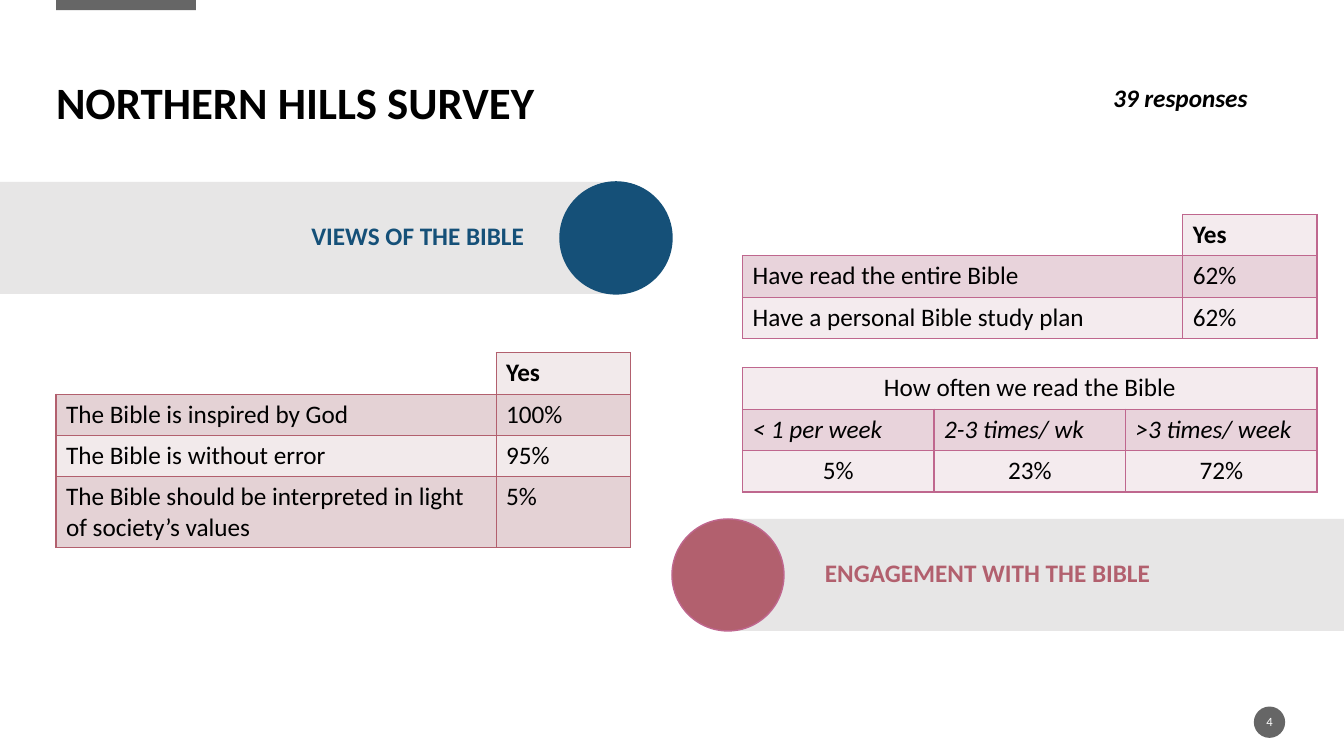
from lxml.etree import SubElement
from pptx import Presentation
from pptx.dml.color import RGBColor
from pptx.enum.shapes import MSO_SHAPE as Preset
from pptx.enum.text import MSO_ANCHOR as Anchor, MSO_AUTO_SIZE as AutoSize, PP_ALIGN as Align
from pptx.oxml.ns import qn
from pptx.util import Inches, Pt

WIDTH, HEIGHT = Inches(13.33), Inches(7.5)
UNIT = WIDTH / 24
ROW = 0.74
ANSWER_COLS = (7.86, 2.4)
FREQUENCY_COLS = (3.42, 3.42, 3.42)
COLORS = {
    "black": "000000", "white": "FFFFFF", "gray": "666666", "band": "E7E6E6",
    "navy": "155078", "rose": "B2606E", "pink": "BF678E",
}
VIEWS_STYLE = {"border": "B2606E", "bands": ("F2EAEB", "E4D2D5")}
ENGAGEMENT_STYLE = {"border": "BF678E", "bands": ("F4EBEE", "E8D3DB")}


def grid(*units):
    """Turn grid units, 24 to the slide's width, into lengths."""
    return [round(unit * UNIT) for unit in units]


def rgb(name):
    """Look up a named colour."""
    return RGBColor.from_string(COLORS[name])


def write(frame, text, size=18, color="black", bold=False, italic=False,
          align=Align.LEFT, spacing=None, before=None):
    """Put one formatted paragraph into a text frame."""
    paragraph = frame.paragraphs[0]
    paragraph.alignment = align
    paragraph.line_spacing = spacing
    paragraph.space_before = before
    run = paragraph.add_run()
    run.text = text
    font = run.font
    font.name, font.size, font.bold, font.italic = "Calibri", Pt(size), bold, italic
    font.color.rgb = rgb(color)


def trim(frame, anchor):
    """Remove the insets of a text frame and anchor its text."""
    frame.margin_left = frame.margin_right = frame.margin_top = frame.margin_bottom = 0
    frame.vertical_anchor = anchor
    frame.auto_size = AutoSize.NONE
    frame.word_wrap = True


def add_block(slide, preset, place, fill, outline=None):
    """Draw a plain filled shape."""
    block = slide.shapes.add_shape(preset, *grid(*place))
    block.shadow.inherit = False
    block.fill.solid()
    block.fill.fore_color.rgb = rgb(fill)
    if outline:
        block.line.color.rgb = rgb(outline)
        block.line.width = Pt(1)
    else:
        block.line.fill.background()


def fill_placeholder(holder, place, text, anchor=Anchor.MIDDLE, **style):
    """Move a placeholder and write its text."""
    holder.left, holder.top, holder.width, holder.height = grid(*place)
    trim(holder.text_frame, anchor)
    write(holder.text_frame, text, bold=True, spacing=0.9, **style)


def set_borders(cell, color, edges):
    """Draw the given edges of a cell and clear the others."""
    properties = cell._tc.get_or_add_tcPr()
    for edge in "LRTB":
        line = SubElement(properties, qn(f"a:ln{edge}"), w=str(Pt(1)))
        if edge in edges:
            paint = SubElement(line, qn("a:solidFill"))
            SubElement(paint, qn("a:srgbClr"), val=color)
        else:
            SubElement(line, qn("a:noFill"))


def add_survey_table(slide, left, top, columns, rows, style, formats, heights=None):
    """Build a banded table; formats gives text keywords by row number."""
    heights = heights or [ROW] * len(rows)
    place = grid(left, top, sum(columns), sum(heights))
    table = slide.shapes.add_table(len(rows), len(columns), *place).table
    table.first_row = table.horz_banding = False
    for column, width in zip(table.columns, grid(*columns)):
        column.width = width
    for row, height in zip(table.rows, grid(*heights)):
        row.height = height
    for number, answers in enumerate(rows):
        for cell, answer in zip(table.rows[number].cells, answers):
            set_borders(cell, style["border"], "RB" if answer == "" else "LRTB")
            if answer == "":
                cell.fill.background()
                continue
            cell.fill.solid()
            cell.fill.fore_color.rgb = RGBColor.from_string(style["bands"][number % 2])
            if answer:
                write(cell.text_frame, answer, **formats.get(number, {}))
    return table


def main():
    """Build the survey slide."""
    deck = Presentation()
    deck.slide_width, deck.slide_height = WIDTH, HEIGHT
    slide = deck.slides.add_slide(deck.slide_layouts[4])
    holders = {holder.placeholder_format.idx: holder for holder in slide.placeholders}
    for spare in (2, 4):
        holders[spare].element.getparent().remove(holders[spare].element)

    add_block(slide, Preset.RECTANGLE, (13, 9.27, 11, 2), "band")
    add_block(slide, Preset.RECTANGLE, (0, 3.25, 11.07, 2), "band")
    add_block(slide, Preset.RECTANGLE, (1, 0, 2.5, 0.18), "gray")
    add_block(slide, Preset.OVAL, (22.39, 12.62, 0.56, 0.56), "gray")
    add_block(slide, Preset.OVAL, (10, 3.25, 2, 2), "navy", "navy")
    add_block(slide, Preset.OVAL, (12, 9.27, 2, 2), "rose", "pink")
    for heading in (holders[0], holders[1], holders[3]):
        slide.shapes._spTree.append(heading.element)

    fill_placeholder(holders[0], (1, 0.49, 21.95, 1.82), "NORTHERN HILLS SURVEY",
                     Anchor.BOTTOM, size=32)
    fill_placeholder(holders[1], (2.57, 3.75, 6.79, 0.97), "VIEWS OF THE BIBLE",
                     color="navy", align=Align.RIGHT, before=Pt(10))
    fill_placeholder(holders[3], (14.73, 9.78, 6.79, 0.97), "ENGAGEMENT WITH THE BIBLE",
                     color="rose", before=Pt(10))

    page = slide.shapes.add_textbox(*grid(22.38, 12.71, 0.58, 0.36)).text_frame
    trim(page, Anchor.MIDDLE)
    write(page, "4", size=9, color="white", align=Align.CENTER)
    responses = slide.shapes.add_textbox(*grid(19.7, 1.39, 2.97, 0.73)).text_frame
    responses.word_wrap = True
    write(responses, "39 responses", bold=True, italic=True)

    yes_header = {0: {"bold": True}}
    add_survey_table(slide, 1, 6.3, ANSWER_COLS, [
        ("", "Yes"),
        ("The Bible is inspired by God", "100%"),
        ("The Bible is without error", "95%"),
        ("The Bible should be interpreted in light of society’s values", "5%"),
    ], VIEWS_STYLE, yes_header, [ROW, ROW, ROW, 1.26])
    add_survey_table(slide, 13.26, 3.83, ANSWER_COLS, [
        ("", "Yes"),
        ("Have read the entire Bible", "62%"),
        ("Have a personal Bible study plan", "62%"),
    ], ENGAGEMENT_STYLE, yes_header)
    centered = {"align": Align.CENTER}
    frequency = add_survey_table(slide, 13.26, 6.57, FREQUENCY_COLS, [
        ("How often we read the Bible", None, None),
        ("< 1 per week", "2-3 times/ wk", ">3 times/ week"),
        ("5%", "23%", "72%"),
    ], ENGAGEMENT_STYLE, {0: centered, 1: {"italic": True}, 2: centered})
    frequency.cell(0, 0).merge(frequency.cell(0, 2))

    deck.save("out.pptx")


if __name__ == "__main__":
    main()
